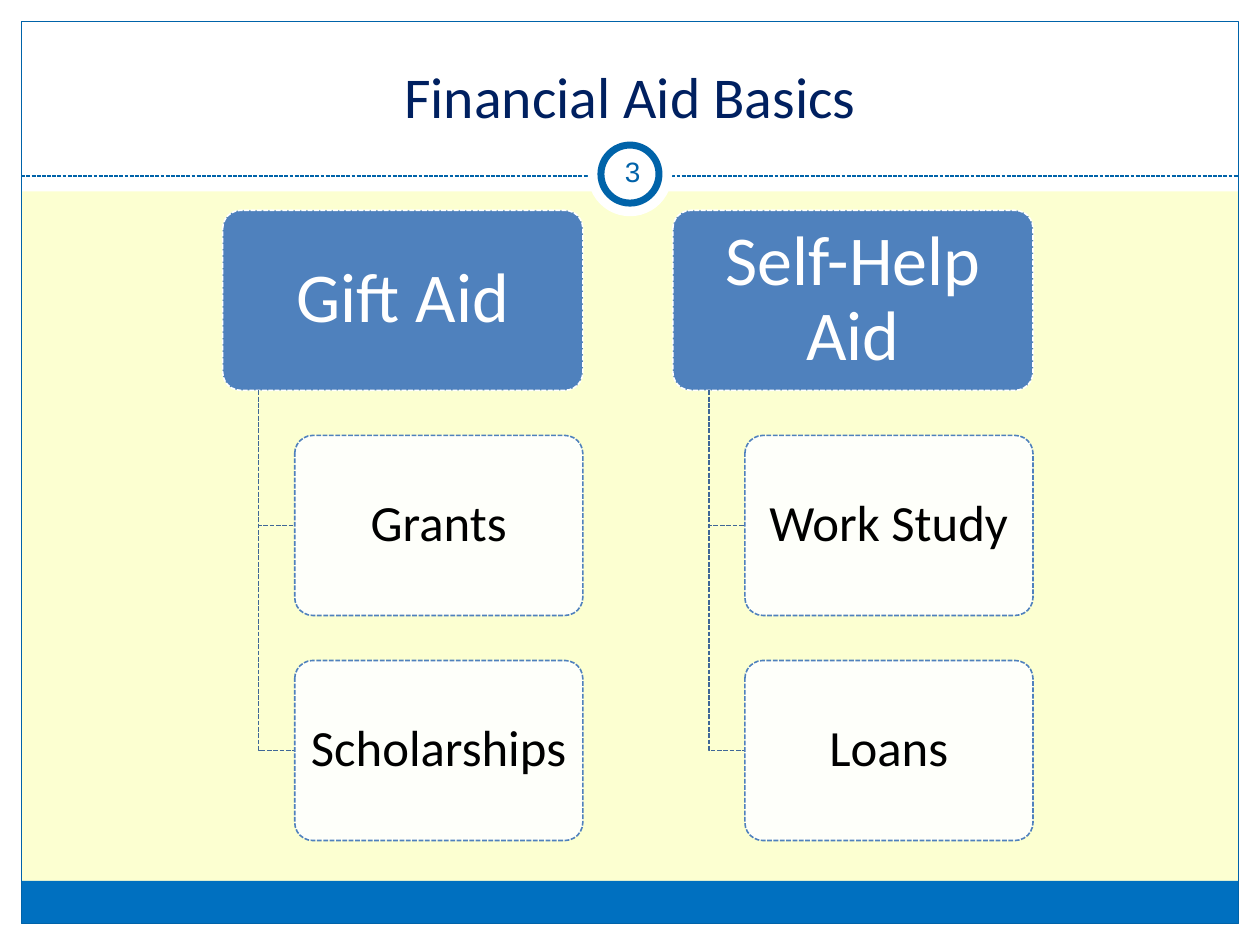
from dataclasses import dataclass

from lxml import etree
from pptx import Presentation
from pptx.dml.color import RGBColor
from pptx.enum.dml import MSO_LINE_DASH_STYLE as Dash
from pptx.enum.shapes import MSO_CONNECTOR, MSO_SHAPE as Shape
from pptx.enum.text import MSO_ANCHOR as Anchor, PP_ALIGN as Align
from pptx.oxml.ns import qn
from pptx.util import Cm, Pt

COLORS = {
    "cream": "FCFFD1", "white": "FFFFFF", "black": "000000",
    "footer": "0070C0", "frame": "0063A9", "number": "0062A9",
    "title": "002060", "box": "4F81BD", "branch": "3F6797",
}

# Slide and tree measures in cm; the tree follows from the head box
SLIDE_W, SLIDE_H, MARGIN = 25.4, 19.05, 0.43
HEAD_W, HEAD_H = 7.26, 3.63
TREE_X, TREE_Y = 4.49, 4.24
COL_STEP, ROW_STEP = 1.25 * HEAD_W, 1.25 * HEAD_H
TRUNK, INDENT = 0.1 * HEAD_W, 0.2 * HEAD_W


@dataclass
class Box:
    x: float
    y: float
    w: float
    h: float

    def cm(self) -> tuple:
        return Cm(self.x), Cm(self.y), Cm(self.w), Cm(self.h)


@dataclass
class Style:
    size: float
    color: str
    font: str = "Calibri"
    inset: tuple = (0.25, 0.13)
    anchor: Anchor = Anchor.MIDDLE
    spacing: float = 1.0


@dataclass
class Branch:
    head: str
    items: tuple


# Rounded corners already hold the text in by about 0.1 cm
HEAD = Style(40, "white", inset=(0.2, 0.15), spacing=0.9)
ITEM = Style(29, "black", inset=(0.14, 0.1), spacing=0.9)
BRANCHES = [
    Branch("Gift Aid", ("Grants", "Scholarships")),
    Branch("Self-Help Aid", ("Work Study", "Loans")),
]


def rgb(name: str) -> RGBColor:
    return RGBColor.from_string(COLORS[name])


def set_line(line, color: str | None, width: float, dashed: bool) -> None:
    if color is None:
        line.fill.background()
        return
    line.color.rgb = rgb(color)
    line.width = Pt(width)
    if dashed:
        line.dash_style = Dash.SQUARE_DOT


def add_shape(s, kind: Shape, box: Box, fill: str | None = None,
              line: str | None = None, width: float = 0.9, dashed: bool = False):
    sp = s.shapes.add_shape(kind, *box.cm())
    sp.shadow.inherit = False
    if fill:
        sp.fill.solid()
        sp.fill.fore_color.rgb = rgb(fill)
    else:
        sp.fill.background()
    set_line(sp.line, line, width, dashed)
    return sp


def add_text(sp, text: str, style: Style) -> None:
    tf = sp.text_frame
    tf.word_wrap = True
    tf.vertical_anchor = style.anchor
    tf.margin_left = tf.margin_right = Cm(style.inset[0])
    tf.margin_top = tf.margin_bottom = Cm(style.inset[1])
    p = tf.paragraphs[0]
    p.alignment = Align.CENTER
    p.line_spacing = style.spacing
    r = p.add_run()
    r.text = text
    r.font.name = style.font
    r.font.size = Pt(style.size)
    r.font.color.rgb = rgb(style.color)


def add_card(s, box: Box, text: str, style: Style, fill: str, line: str):
    sp = add_shape(s, Shape.ROUNDED_RECTANGLE, box, fill, line, dashed=True)
    sp.adjustments[0] = 0.1
    add_text(sp, text, style)
    return sp


def set_alpha(sp, percent: int) -> None:
    clr = sp._element.spPr.find(qn("a:solidFill"))[0]
    etree.SubElement(clr, qn("a:alpha")).set("val", str(percent * 1000))


def add_elbow(s, x: float, top: float, bottom: float, right: float) -> None:
    fb = s.shapes.build_freeform(Cm(x), Cm(top))
    fb.add_line_segments([(Cm(x), Cm(bottom)), (Cm(right), Cm(bottom))], close=False)
    sp = fb.convert_to_shape()
    sp.shadow.inherit = False
    sp.fill.background()
    set_line(sp.line, "branch", 0.9, True)


def add_branch(s, x: float, branch: Branch) -> None:
    add_card(s, Box(x, TREE_Y, HEAD_W, HEAD_H), branch.head, HEAD, "box", "white")
    for row, item in enumerate(branch.items, start=1):
        y = TREE_Y + row * ROW_STEP
        add_elbow(s, x + TRUNK, TREE_Y + HEAD_H, y + HEAD_H / 2, x + INDENT)
        box = Box(x + INDENT, y, HEAD_W - INDENT, HEAD_H)
        set_alpha(add_card(s, box, item, ITEM, "white", "box"), 90)


def add_frame(s) -> None:
    inner_w, inner_h = SLIDE_W - 2 * MARGIN, SLIDE_H - 2 * MARGIN
    # White margins and header band
    for box in (Box(0, SLIDE_H - MARGIN, SLIDE_W, MARGIN),
                Box(0, 0, SLIDE_W, 3.86),
                Box(0, 0, MARGIN, SLIDE_H),
                Box(SLIDE_W - MARGIN, 0, MARGIN, SLIDE_H)):
        add_shape(s, Shape.RECTANGLE, box, "white")
    # Footer bar and outline
    add_shape(s, Shape.RECTANGLE, Box(MARGIN, 17.76, inner_w, 0.86), "footer")
    add_shape(s, Shape.RECTANGLE, Box(MARGIN, MARGIN, inner_w, inner_h),
              line="frame", width=0.75)
    # Dashed rule under the title
    rule = s.shapes.add_connector(MSO_CONNECTOR.STRAIGHT, Cm(MARGIN), Cm(3.55),
                                  Cm(SLIDE_W - MARGIN), Cm(3.55))
    set_line(rule.line, "frame", 0.75, True)
    etree.SubElement(rule._element.spPr, qn("a:effectLst"))
    # Page number ring
    for d, line in ((1.7, None), (1.17, "frame")):
        add_shape(s, Shape.OVAL, Box((SLIDE_W - d) / 2, 3.51 - d / 2, d, d),
                  "white", line, width=4)


def main() -> None:
    prs = Presentation()
    prs.slide_width, prs.slide_height = Cm(SLIDE_W), Cm(SLIDE_H)
    s = prs.slides.add_slide(prs.slide_layouts[6])
    s.background.fill.solid()
    s.background.fill.fore_color.rgb = rgb("cream")

    add_frame(s)

    # Title and page number
    title = s.shapes.add_textbox(*Box(0.85, 0.64, 23.7, 2.12).cm())
    add_text(title, "Financial Aid Basics", Style(33, "title", anchor=Anchor.BOTTOM))
    number = s.shapes.add_textbox(*Box(12.12, 2.85, 1.27, 1.22).cm())
    add_text(number, "3", Style(16, "number", "Arial", (0.13, 0.13)))

    # Aid tree
    for col, branch in enumerate(BRANCHES):
        add_branch(s, TREE_X + col * COL_STEP, branch)

    prs.save("out.pptx")


if __name__ == "__main__":
    main()
